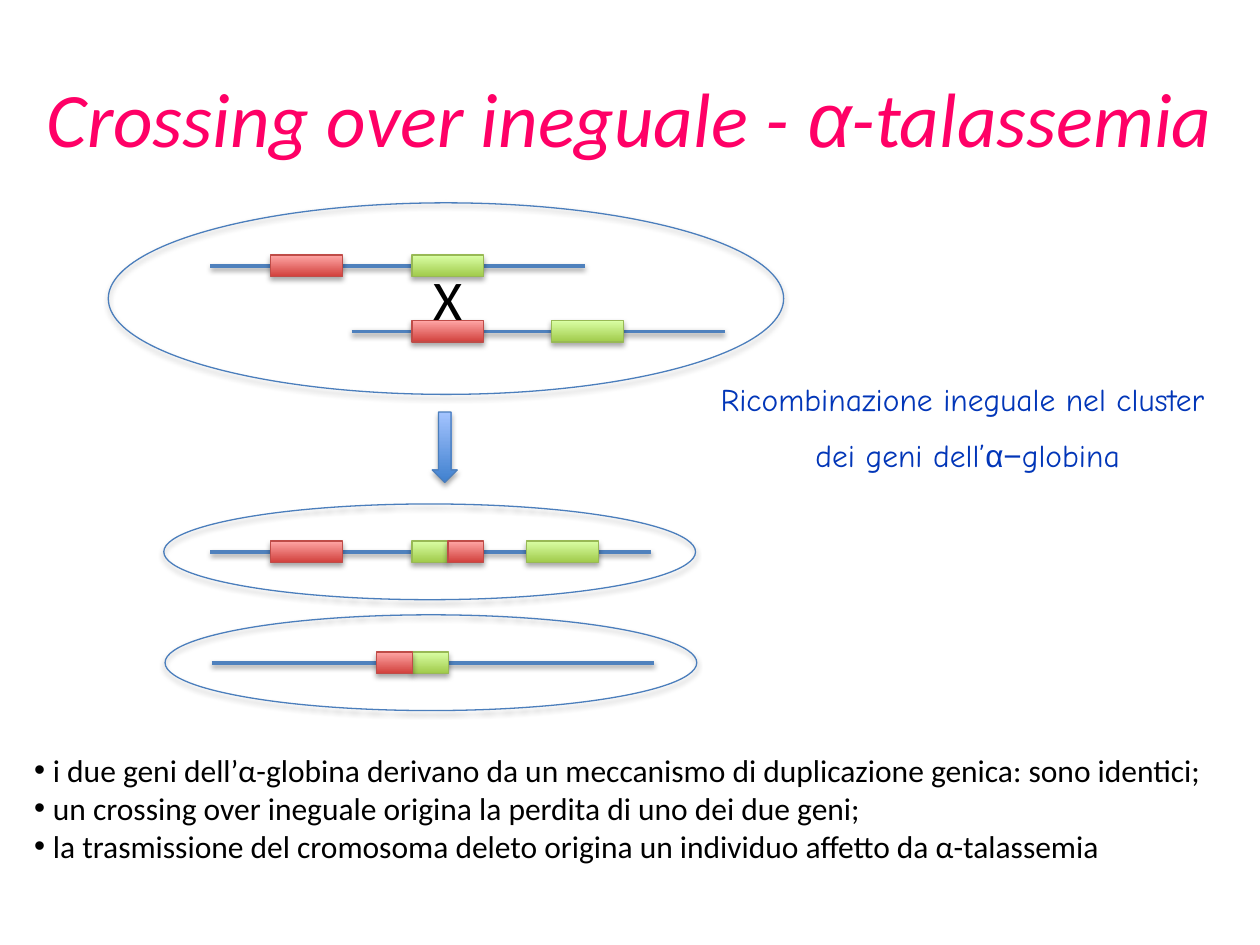
from lxml.etree import SubElement
from pptx import Presentation
from pptx.dml.color import RGBColor
from pptx.enum.shapes import MSO_CONNECTOR, MSO_SHAPE
from pptx.enum.text import MSO_ANCHOR, MSO_AUTO_SIZE, PP_ALIGN
from pptx.oxml.ns import qn
from pptx.util import Inches, Pt

PINK = RGBColor(0xFF, 0x00, 0x66)
INK = RGBColor(0x02, 0x36, 0xB8)
BLACK = RGBColor(0x00, 0x00, 0x00)
STRAND = RGBColor(0x4F, 0x81, 0xBD)
OUTLINE = RGBColor(0x4B, 0x7E, 0xBC)
RED = (RGBColor(0xD1, 0x40, 0x3C), RGBColor(0xFF, 0xA6, 0xA5), RGBColor(0xBF, 0x4C, 0x48))
GREEN = (RGBColor(0xA0, 0xCA, 0x4A), RGBColor(0xDA, 0xFF, 0xA5), RGBColor(0x98, 0xB9, 0x55))
BLUE = (RGBColor(0x3F, 0x80, 0xCE), RGBColor(0xA4, 0xC4, 0xFF), OUTLINE)

COLS, ROWS = 100, 75
GENE, HALF, GENE_H = 5.7, 2.85, 1.7


class Board:
    text_font, note_font, symbol_font = "Calibri", "Comic Neue", "Arial"

    def __init__(self, prs):
        self.s = prs.slides.add_slide(prs.slide_layouts[1])
        self.col = prs.slide_width / COLS
        self.row = prs.slide_height / ROWS

    def box(self, x, y, w, h):
        return [int(v) for v in (x * self.col, y * self.row, w * self.col, h * self.row)]

    def place(self, sp, *cells):
        sp.left, sp.top, sp.width, sp.height = self.box(*cells)
        return sp.text_frame

    def runs(self, p, parts, font, size, color):
        p.font.size, p.font.color.rgb = Pt(size), color
        for text in parts:
            r = p.add_run()
            r.text = text
            r.font.name = self.symbol_font if text.startswith("α") else font

    def title(self, cells, parts):
        tf = self.place(self.s.shapes.title, *cells)
        tf.auto_size = MSO_AUTO_SIZE.NONE
        tf.vertical_anchor = MSO_ANCHOR.MIDDLE
        p = tf.paragraphs[0]
        p.alignment, p.font.italic = PP_ALIGN.CENTER, True
        self.runs(p, parts, self.text_font, 44, PINK)

    def bullets(self, cells, items):
        tf = self.place(self.s.placeholders[1], *cells)
        tf.auto_size = MSO_AUTO_SIZE.NONE
        for i, item in enumerate(items):
            p = tf.paragraphs[0] if i == 0 else tf.add_paragraph()
            p.text = item
            p.space_before = Pt(0)
            p.font.name, p.font.size, p.font.color.rgb = self.text_font, Pt(18), BLACK
            pPr = p._p.get_or_add_pPr()
            pPr.set("marL", str(Inches(0.15)))
            pPr.set("indent", str(-Inches(0.15)))

    def note(self, cells, lines, font, size, color, align=PP_ALIGN.CENTER, gap=0, wrap=True):
        tf = self.s.shapes.add_textbox(*self.box(*cells)).text_frame
        tf.word_wrap = wrap
        for i, parts in enumerate(lines):
            p = tf.paragraphs[0] if i == 0 else tf.add_paragraph()
            p.alignment, p.space_before = align, Pt(gap)
            self.runs(p, parts, font, size, color)

    def shadow(self, sp, dist, alpha):
        spPr = sp._element.spPr
        effects = SubElement(spPr, qn("a:effectLst"))
        outer = SubElement(effects, qn("a:outerShdw"), blurRad=str(Pt(3.1)),
                           dist=str(Pt(dist)), dir="5400000", rotWithShape="0")
        color = SubElement(outer, qn("a:srgbClr"), val="000000")
        SubElement(color, qn("a:alpha"), val=str(alpha * 1000))

    def shape(self, kind, cells, colors=None):
        sp = self.s.shapes.add_shape(kind, *self.box(*cells))
        if colors:
            sp.fill.gradient()
            sp.fill.gradient_angle = 90
            for stop, color in zip(sp.fill.gradient_stops, colors):
                stop.color.rgb = color
                stop.position = float(color == colors[1])
        else:
            sp.fill.background()
        sp.line.color.rgb = colors[2] if colors else OUTLINE
        sp.line.width = Pt(0.75)
        self.shadow(sp, 1.8, 35)

    def chromosome(self, start, end, row, genes):
        x1, y, x2, _ = self.box(start, row, end, 0)
        line = self.s.shapes.add_connector(MSO_CONNECTOR.STRAIGHT, x1, y, x2, y)
        line.line.color.rgb, line.line.width = STRAND, Pt(2)
        self.shadow(line, 1.6, 38)
        for x, width, colors in genes:
            self.shape(MSO_SHAPE.RECTANGLE, (x, row - GENE_H / 2, width, GENE_H), colors)


def main():
    prs = Presentation()
    prs.slide_width, prs.slide_height = Inches(10), Inches(7.5)
    b = Board(prs)
    b.title((1, 3, 97.9, 12.5), ["Crossing over ineguale - ", "α", "-talassemia"])
    b.note((54.3, 29.7, 45, 8.6),
           [["Ricombinazione ineguale nel cluster "], ["dei geni dell’", "α−", "globina"]],
           b.note_font, 18, INK, gap=10)
    b.bullets((1.7, 59.1, 96.5, 10.1), [
        "i due geni dell’α-globina derivano da un meccanismo di duplicazione genica: sono identici;",
        "un crossing over ineguale origina la perdita di uno dei due geni;",
        "la trasmissione del cromosoma deleto origina un individuo affetto da α-talassemia",
    ])
    b.chromosome(16.7, 46.4, 21.1, [(21.5, GENE, RED), (32.7, GENE, GREEN)])
    b.chromosome(27.9, 57.5, 26.3, [(32.7, GENE, RED), (43.8, GENE, GREEN)])
    b.chromosome(16.7, 51.7, 43.8, [(21.5, GENE, RED), (32.7, HALF, GREEN),
                                    (32.7 + HALF, HALF, RED), (41.8, GENE, GREEN)])
    b.chromosome(16.8, 51.9, 52.6, [(29.9 + HALF, HALF, GREEN), (29.9, HALF, RED)])
    b.note((33.4, 20.5, 4.4, 6.4), [["X"]], b.text_font, 32, BLACK, PP_ALIGN.LEFT, wrap=False)
    b.shape(MSO_SHAPE.DOWN_ARROW, (34.3, 32.7, 2, 5.6), BLUE)
    for cells in ((8.6, 16.1, 53.6, 15.2), (13, 40, 42.2, 7.6), (13.1, 48.8, 42.2, 7.6)):
        b.shape(MSO_SHAPE.OVAL, cells)
    prs.save("out.pptx")


if __name__ == "__main__":
    main()
